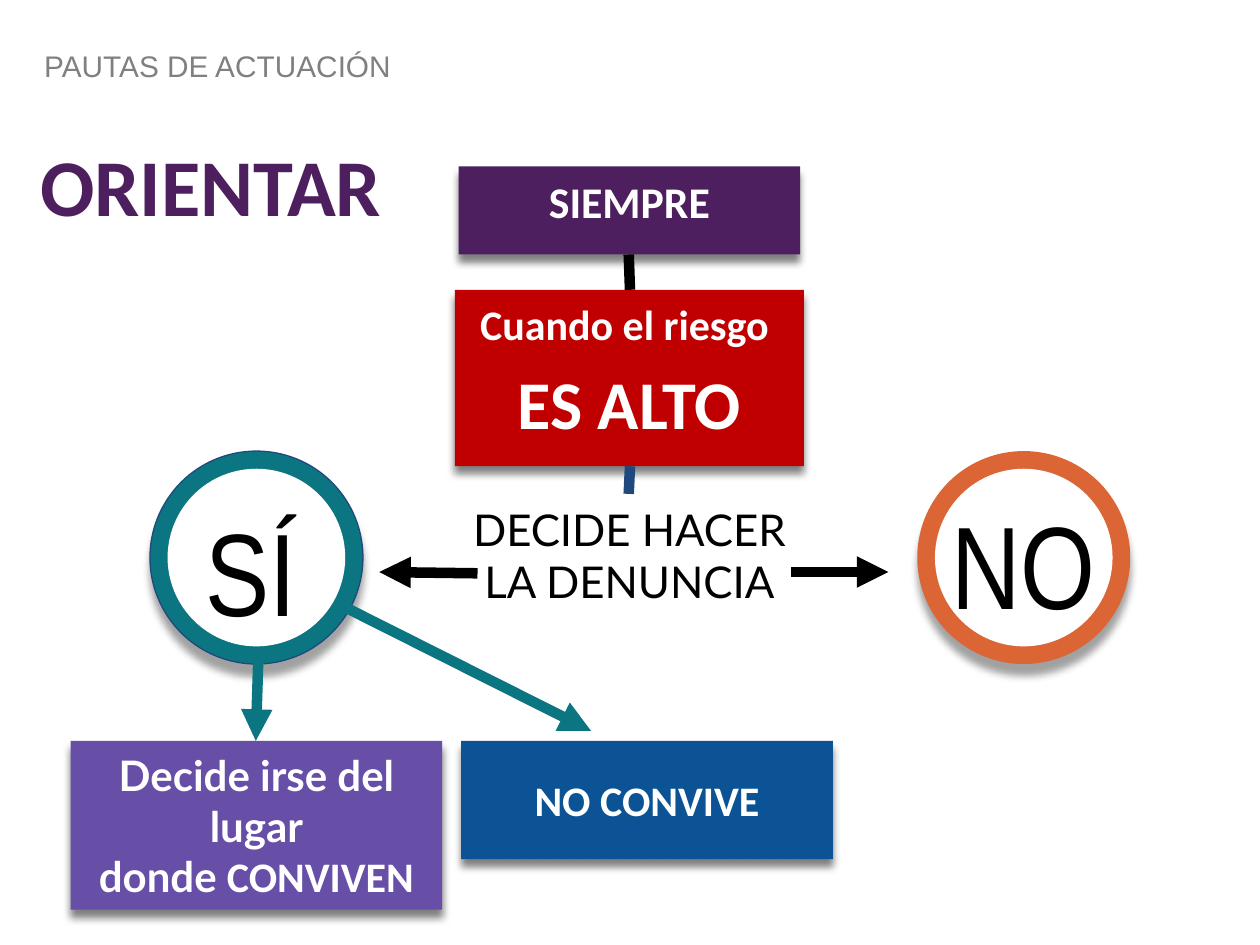
"""Build the ORIENTAR decision-flow slide."""
from dataclasses import dataclass

from lxml import etree
from pptx import Presentation
from pptx import util as u
from pptx.dml.color import RGBColor
from pptx.enum import shapes, text
from pptx.oxml.ns import qn


@dataclass(frozen=True)
class Theme:
    black: str = "000000"
    white: str = "FFFFFF"
    gray: str = "808080"
    purple: str = "4E1F5E"
    red: str = "C00000"
    teal: str = "0B7681"
    orange: str = "DB6535"
    violet: str = "674EA7"
    blue: str = "0B5394"
    navy: str = "1F497D"
    heading: str = "Calibri"
    body: str = "Lato"
    label: str = "Arial"
    narrow: str = "Arial Narrow"
    small: float = 17
    medium: float = 24
    large: float = 25
    alert: float = 39
    title: float = 46
    answer: float = 67
    stroke: float = 6


THEME = Theme()
RECTANGLE = shapes.MSO_SHAPE.RECTANGLE
OVAL = shapes.MSO_SHAPE.OVAL
CENTER = text.PP_ALIGN.CENTER
TOP, MIDDLE, BOTTOM = (
    text.MSO_ANCHOR.TOP, text.MSO_ANCHOR.MIDDLE, text.MSO_ANCHOR.BOTTOM)


def color(value):
    return RGBColor.from_string(value)


def write(shape, *paragraphs, size=THEME.medium, font=THEME.heading, fill=THEME.white,
          bold=False, align=CENTER, anchor=TOP, inset=0.07, before=0, spacing=None):
    """Each paragraph is a list of runs; a run is text or (text, overrides)."""
    frame = shape.text_frame
    frame.word_wrap = True
    frame.auto_size = text.MSO_AUTO_SIZE.NONE
    frame.vertical_anchor = anchor
    for side in ("left", "top", "right", "bottom"):
        setattr(frame, f"margin_{side}", u.Inches(inset))
    for index, runs in enumerate(paragraphs):
        paragraph = frame.add_paragraph() if index else frame.paragraphs[0]
        paragraph.alignment = align
        paragraph.space_before = u.Pt(before)
        paragraph.line_spacing = spacing
        for item in runs:
            words, changes = (item, {}) if isinstance(item, str) else item
            run = paragraph.add_run()
            run.text = words
            run.font.size = u.Pt(changes.get("size", size))
            run.font.name = changes.get("font", font)
            run.font.bold = bold
            run.font.color.rgb = color(fill)


def place(shape, left, top, width, height):
    shape.left, shape.top = u.Inches(left), u.Inches(top)
    shape.width, shape.height = u.Inches(width), u.Inches(height)


def add_shadow(shape, opacity, distance):
    effects = shape._element.spPr.find(qn("a:effectLst"))
    shadow = etree.SubElement(
        effects, qn("a:outerShdw"), blurRad=str(u.Pt(4.5)), dist=str(u.Pt(distance)),
        dir="5400000", algn="ctr", rotWithShape="0")
    shade = etree.SubElement(shadow, qn("a:srgbClr"), val=THEME.black)
    etree.SubElement(shade, qn("a:alpha"), val=str(opacity * 1000))


def add_figure(slide, kind, box, fill, outline=None):
    shape = slide.shapes.add_shape(kind, *map(u.Inches, box))
    shape.fill.solid()
    shape.fill.fore_color.rgb = color(fill)
    if outline:
        shape.line.color.rgb = color(outline)
        shape.line.width = u.Pt(0.75)
    else:
        shape.line.fill.background()
    shape.shadow.inherit = False
    return shape


def add_card(slide, box, fill, *paragraphs, **style):
    card = add_figure(slide, RECTANGLE, box, fill)
    add_shadow(card, 50, 4.5)
    write(card, *paragraphs, bold=True, **style)


def add_label(slide, box, words, **style):
    label = slide.shapes.add_textbox(*map(u.Inches, box))
    write(label, [words], fill=THEME.black, **style)


def add_ring(slide, left, top, fill, outline=None):
    outer, border = 1.69, 0.14
    ring = add_figure(slide, OVAL, (left, top, outer, outer), fill, outline)
    add_shadow(ring, 36, 6.8)
    inner = outer - 2 * border
    add_figure(slide, OVAL, (left + border, top + border, inner, inner), THEME.white)


def add_line(slide, start, end, fill, arrow=True):
    line = slide.shapes.add_connector(
        shapes.MSO_CONNECTOR.STRAIGHT, *map(u.Inches, (*start, *end)))
    line.line.color.rgb = color(fill)
    line.line.width = u.Pt(THEME.stroke)
    properties = line._element.spPr
    if arrow:
        etree.SubElement(properties.find(qn("a:ln")), qn("a:tailEnd"), type="triangle")
    etree.SubElement(properties, qn("a:effectLst"))


def add_headings(slide):
    """Fill the title and body placeholders."""
    style = dict(align=text.PP_ALIGN.LEFT, inset=0.04, spacing=0.8)
    section = slide.placeholders[1]
    place(section, 0.31, 0.35, 8.59, 0.35)
    write(section, ["PAUTAS DE ACTUACIÓN"], size=THEME.small, font=THEME.label,
          fill=THEME.gray, anchor=BOTTOM, **style)
    properties = section.text_frame.paragraphs[0]._p.get_or_add_pPr()
    properties.set("marL", "0")
    properties.set("indent", "0")
    etree.SubElement(properties, qn("a:buNone"))
    title = slide.shapes.title
    place(title, 0.28, 0.9, 3.2, 1.27)
    write(title, ["ORIENTAR"], size=THEME.title, fill=THEME.purple, bold=True,
          anchor=MIDDLE, **style)


def main():
    presentation = Presentation()
    presentation.slide_width, presentation.slide_height = u.Inches(10), u.Inches(7.5)
    slide = presentation.slides.add_slide(presentation.slide_layouts[1])
    add_headings(slide)

    add_card(slide, (3.64, 1.32, 2.71, 0.7), THEME.purple, ["SIEMPRE"],
             size=THEME.large, before=7)
    add_card(slide, (3.61, 2.3, 2.77, 1.4), THEME.red, ["Cuando el riesgo "],
             [("ES ALTO", {"size": THEME.alert})], before=7)
    add_label(slide, (3.64, 3.92, 2.71, 1.27), "DECIDE HACER LA DENUNCIA",
              size=THEME.large, font=THEME.body)

    add_ring(slide, 1.19, 3.58, THEME.teal, THEME.navy)
    add_ring(slide, 7.28, 3.58, THEME.orange)
    for left, top, answer in ((1.1, 3.89, "SÍ"), (7.23, 3.84, "NO")):
        add_label(slide, (left, top, 1.78, 1.41), answer,
                  size=THEME.answer, font=THEME.narrow)

    add_card(slide, (0.56, 5.88, 2.95, 1.34), THEME.violet, ["Decide irse del lugar"],
             ["donde ", ("CONVIVEN", {"font": THEME.heading})], font=THEME.body)
    add_card(slide, (3.66, 5.88, 2.95, 0.94), THEME.blue, ["NO CONVIVE"], anchor=MIDDLE)

    add_line(slide, (4.99, 2.02), (5, 2.3), THEME.black, arrow=False)
    add_line(slide, (5, 3.7), (4.99, 3.92), THEME.navy, arrow=False)
    add_line(slide, (3.79, 4.55), (3.01, 4.54), THEME.black)
    add_line(slide, (6.28, 4.54), (7.05, 4.54), THEME.black)
    add_line(slide, (2.05, 5.24), (2.03, 5.88), THEME.teal)
    add_line(slide, (2.72, 4.81), (4.69, 5.8), THEME.teal)
    presentation.save("out.pptx")


if __name__ == "__main__":
    main()
